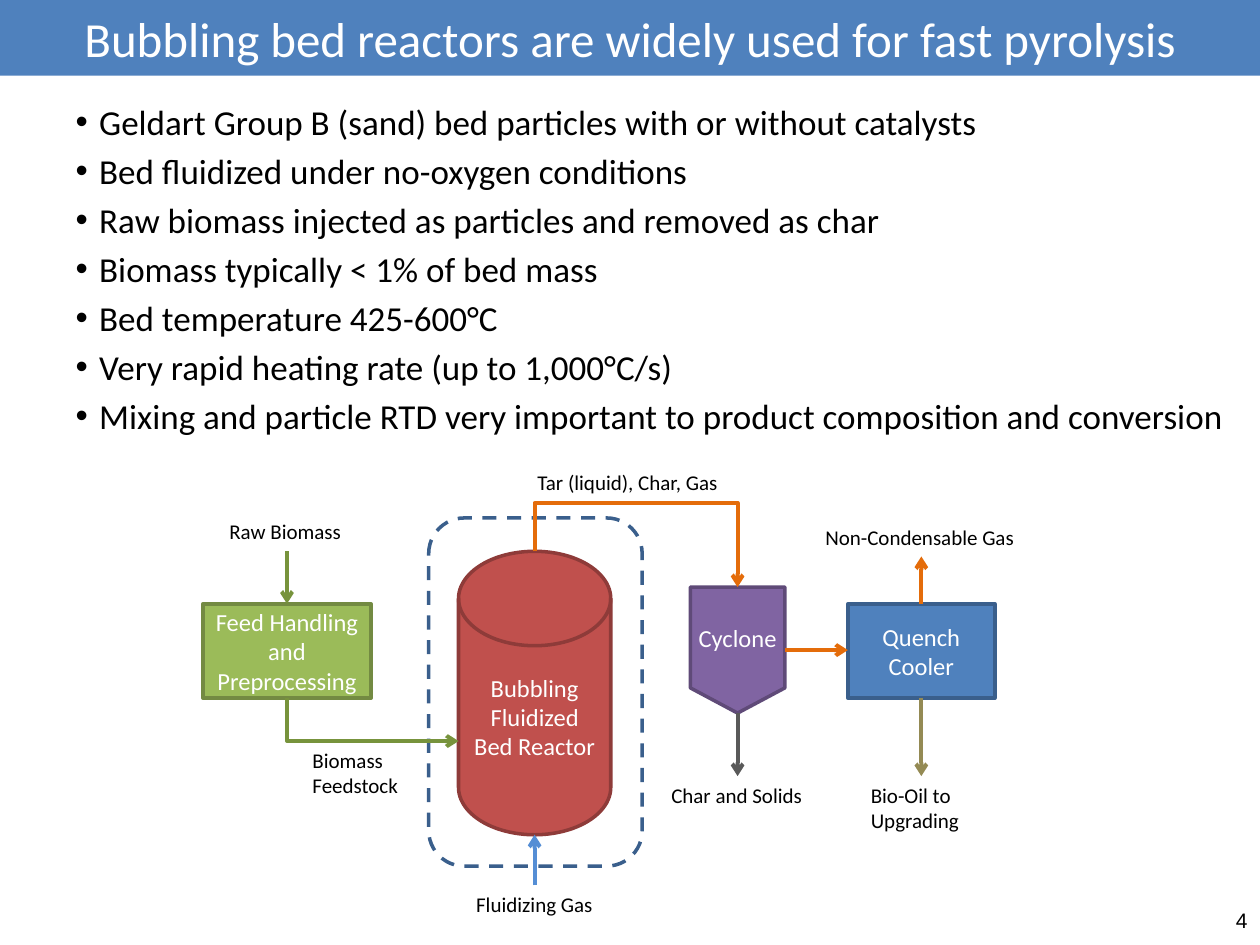
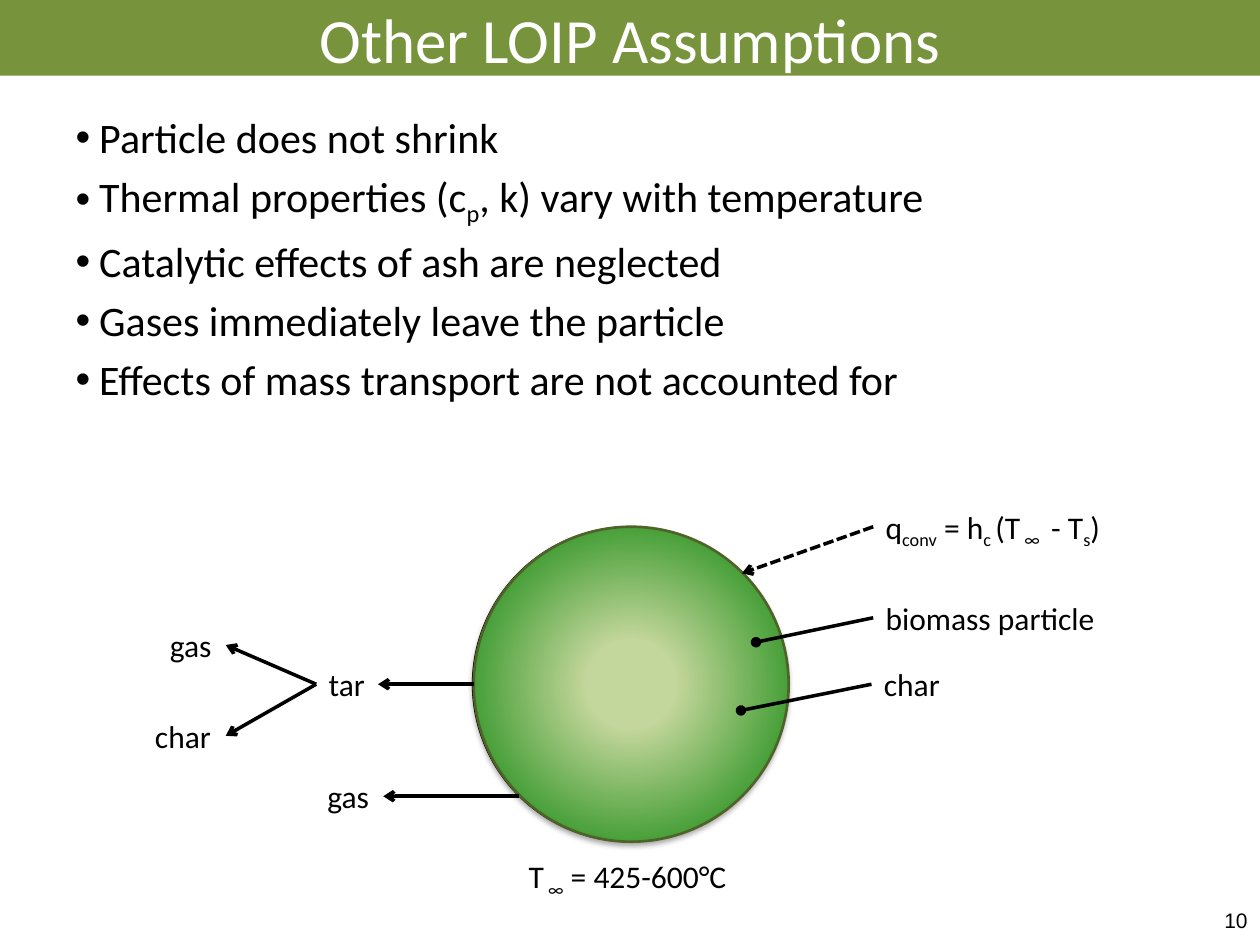
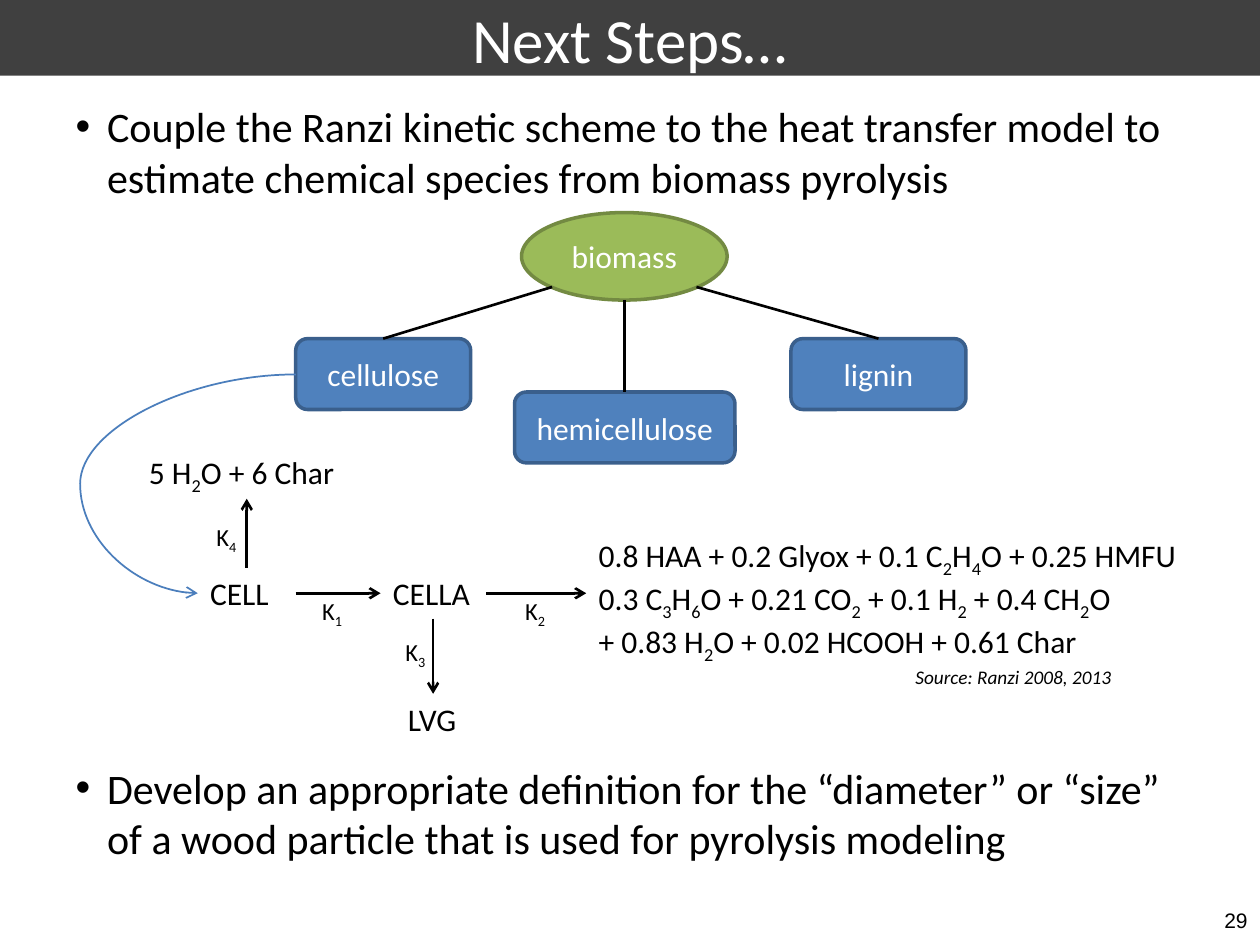
from dataclasses import dataclass
from lxml.etree import SubElement
from pptx import Presentation
from pptx.dml.color import RGBColor
from pptx.enum.dml import MSO_LINE
from pptx.enum.shapes import MSO_CONNECTOR, MSO_SHAPE
from pptx.enum.text import MSO_ANCHOR, MSO_AUTO_SIZE, PP_ALIGN
from pptx.oxml.ns import qn
from pptx.slide import Slide
from pptx.util import Pt

COLORS = {
    "black": "000000", "white": "FFFFFF", "charcoal": "404040", "gray": "595959",
    "blue": "4F81BD", "blue_edge": "3A5F8C", "sky": "558ED5", "curve": "4B7EBC",
    "green": "9BBB59", "green_edge": "738A42", "olive": "77933C",
    "red": "C0504D", "red_edge": "8E3B39", "purple": "8064A2", "purple_edge": "5F4A78",
    "orange": "E46C0A", "tan": "948A54", "brown": "984807",
    "core": "C3D69B", "rim": "008000", "particle_edge": "4F6228",
}
TITLE_BOX = (0, 0, 720, 43.2)
NUMBER_BOX = (552, 511, 168, 29)


def rgb(name):
    return RGBColor.from_string(COLORS[name])


def add_node(parent, tag, **attributes):
    node = SubElement(parent, qn(tag))
    for name, value in attributes.items():
        node.set(name, str(value))
    return node


def place(shape, box):
    shape.left, shape.top, shape.width, shape.height = map(Pt, box)


def write(frame, text, size, color="black", align=None, font="Calibri", italic=None):
    for index, line in enumerate(text.split("\n")):
        paragraph = frame.add_paragraph() if index else frame.paragraphs[0]
        paragraph.alignment = align
        for position, part in enumerate(line.split("~")):
            if not part:
                continue
            run = paragraph.add_run()
            run.text = part
            run.font.name = font
            run.font.size = Pt(size)
            run.font.italic = italic
            run.font.color.rgb = rgb(color)
            if position % 2:
                run.font._element.set("baseline", "-25000")


def style_line(line, color, width, dash=None):
    line.color.rgb = rgb(color)
    line.width = Pt(width)
    if dash:
        line.dash_style = dash


def fill_radial(shape, stops):
    shape.fill.gradient()
    gradient = shape._element.spPr.find(qn("a:gradFill"))
    for child in list(gradient):
        gradient.remove(child)
    stop_list = add_node(gradient, "a:gsLst")
    for percent, color in stops:
        stop = add_node(stop_list, "a:gs", pos=percent * 1000)
        add_node(stop, "a:srgbClr", val=COLORS[color])
    circle = add_node(gradient, "a:path", path="circle")
    add_node(circle, "a:fillToRect", l=50000, t=50000, r=50000, b=50000)


def add_soft_shadow(shape):
    effects = shape._element.spPr.find(qn("a:effectLst"))
    shadow = add_node(effects, "a:outerShdw", blurRad=Pt(3.1), dist=Pt(1.8), dir=5400000, rotWithShape=0)
    color = add_node(shadow, "a:srgbClr", val=COLORS["black"])
    add_node(color, "a:alpha", val=35000)


@dataclass
class Region:
    slide: Slide
    left: float
    top: float
    width: float
    height: float

    def label(self, text, box, size, wrap=True, italic=None):
        left, top, width, height = box
        shape = self.slide.shapes.add_textbox(0, 0, 0, 0)
        place(shape, (self.left + left, self.top + top, width, height))
        shape.text_frame.word_wrap = wrap
        shape.text_frame.auto_size = MSO_AUTO_SIZE.SHAPE_TO_FIT_TEXT
        write(shape.text_frame, text, size, italic=italic)

    def node(self, kind, box, fill, edge, text="", size=14, edge_width=2, dash=None):
        left, top, width, height = box
        shape = self.slide.shapes.add_shape(
            kind, Pt(self.left + left), Pt(self.top + top), Pt(width), Pt(height))
        shape.shadow.inherit = False
        if fill:
            shape.fill.solid()
            shape.fill.fore_color.rgb = rgb(fill)
        else:
            shape.fill.background()
        style_line(shape.line, edge, edge_width, dash)
        if text:
            write(shape.text_frame, text, size, "white", PP_ALIGN.CENTER)
        return shape

    def connector(self, kind, start, end, color, width, tail, dash=None):
        connector = self.slide.shapes.add_connector(
            kind, Pt(self.left + start[0]), Pt(self.top + start[1]),
            Pt(self.left + end[0]), Pt(self.top + end[1]))
        style_line(connector.line, color, width, dash)
        properties = connector._element.spPr
        if tail:
            add_node(properties.find(qn("a:ln")), "a:tailEnd", type=tail)
        add_node(properties, "a:effectLst")
        return connector

    def arrow(self, start, end, color="black", width=2.0, tail="arrow", dash=None):
        self.connector(MSO_CONNECTOR.STRAIGHT, start, end, color, width, tail, dash)

    def route(self, preset, start, end, rotation, flip, color, width, adjust=None):
        across, down = abs(end[0] - start[0]), abs(end[1] - start[1])
        if rotation % 180:
            across, down = down, across
        middle_x, middle_y = (start[0] + end[0]) / 2, (start[1] + end[1]) / 2
        kind = MSO_CONNECTOR.CURVE if preset.startswith("curved") else MSO_CONNECTOR.ELBOW
        connector = self.connector(
            kind, (middle_x - across / 2, middle_y - down / 2),
            (middle_x + across / 2, middle_y + down / 2), color, width, "arrow")
        properties = connector._element.spPr
        frame = properties.find(qn("a:xfrm"))
        frame.set("rot", str(rotation * 60000))
        frame.set(flip, "1")
        geometry = properties.find(qn("a:prstGeom"))
        geometry.set("prst", preset)
        if adjust is not None:
            add_node(geometry.find(qn("a:avLst")), "a:gd", name="adj1", fmla=f"val {adjust}")


def start_slide(presentation, layout, title, title_size, band, number):
    slide = presentation.slides.add_slide(presentation.slide_layouts[layout])
    heading = slide.shapes.title
    place(heading, TITLE_BOX)
    heading.fill.solid()
    heading.fill.fore_color.rgb = rgb(band)
    heading.text_frame.auto_size = MSO_AUTO_SIZE.NONE
    heading.text_frame.vertical_anchor = MSO_ANCHOR.MIDDLE
    write(heading.text_frame, title, title_size, "white", PP_ALIGN.CENTER)
    footer = slide.shapes.add_textbox(0, 0, 0, 0)
    place(footer, NUMBER_BOX)
    footer.text_frame.word_wrap = True
    footer.text_frame.vertical_anchor = MSO_ANCHOR.MIDDLE
    write(footer.text_frame, number, 12, align=PP_ALIGN.RIGHT, font="Arial")
    return slide


def fill_list(placeholder, box, items, size, indent):
    place(placeholder, box)
    frame = placeholder.text_frame
    frame.auto_size = MSO_AUTO_SIZE.NONE
    write(frame, "\n".join(items), size)
    for paragraph in frame.paragraphs:
        properties = paragraph._p.get_or_add_pPr()
        properties.set("marL", str(Pt(indent)))
        properties.set("indent", str(-Pt(indent)))


def draw_process(region):
    region.node(MSO_SHAPE.ROUNDED_RECTANGLE, (130, 31, 122, 199), None, "blue_edge", dash=MSO_LINE.DASH)
    region.node(MSO_SHAPE.FLOWCHART_MAGNETIC_DISK, (147, 50, 87, 162), "red", "red_edge",
                "Bubbling\nFluidized Bed Reactor")
    region.node(MSO_SHAPE.RECTANGLE, (1, 80, 96, 54), "green", "green_edge",
                "Feed Handling\nand Preprocessing")
    cyclone = region.node(MSO_SHAPE.FLOWCHART_OFFPAGE_CONNECTOR, (279.5, 70.5, 54, 72),
                          "purple", "purple_edge", "Cyclone")
    frame = cyclone.text_frame
    frame.margin_left = frame.margin_right = frame.margin_top = frame.margin_bottom = 0
    region.node(MSO_SHAPE.RECTANGLE, (369.5, 80, 84, 54), "blue", "blue_edge", "Quench\nCooler")

    feed_x, reactor_x, cyclone_x, quench_x = 49, 190.5, 306.5, 411.5
    for start, end, color in (
        ((feed_x, 50), (feed_x, 80), "olive"),
        ((333.5, 106.5), (369.5, 106.5), "orange"),
        ((cyclone_x, 142.5), (cyclone_x, 178.5), "gray"),
        ((quench_x, 134), (quench_x, 178.5), "tan"),
        ((quench_x, 80), (quench_x, 53), "orange"),
        ((reactor_x, 241), (reactor_x, 212), "sky"),
    ):
        region.arrow(start, end, color, 2.25)
    region.route("bentConnector2", (feed_x, 134), (147, 158.5), 270, "flipH", "olive", 2.25)
    region.route("bentConnector3", (reactor_x, 50), (cyclone_x, 70.5), 270, "flipH",
                 "orange", 2.25, -135000)

    for text, box, wrap in (
        ("Raw Biomass", (9, 28, 79, 22), False),
        ("Char and Solids", (261.5, 178.5, 90, 22), False),
        ("Bio-Oil to Upgrading", (375.5, 178.5, 71, 36), True),
        ("Biomass\nFeedstock", (56.5, 158.5, 64, 36), False),
        ("Non-Condensable Gas", (349.5, 31, 123, 22), True),
        ("Fluidizing Gas", (150, 241, 81, 22), False),
        ("Tar (liquid), Char, Gas", (185, 0, 143, 22), True),
    ):
        region.label(text, box, 12, wrap)


def draw_particle(region):
    shade = region.node(MSO_SHAPE.OVAL, (190, 16, 180, 180), None, "black", edge_width=0.75)
    fill_radial(shade, ((56, "brown"), (69, "gray")))
    add_soft_shadow(shade)
    particle = region.node(MSO_SHAPE.OVAL, (190.7, 16, 180, 180), None, "particle_edge", edge_width=1.5)
    fill_radial(particle, ((20, "core"), (100, "rim")))

    tar_start = (100.7, 106)
    for start, end in (
        ((190.7, 106), (136, 106)),
        ((216.6, 170), (139, 170)),
        (tar_start, (49, 83.6)),
        (tar_start, (49, 135.5)),
    ):
        region.arrow(start, end)
    region.arrow((419, 16), (344, 42.6), dash=MSO_LINE.SQUARE_DOT)
    region.arrow((419, 68), (352, 82), tail="oval")
    region.arrow((418, 106), (343.4, 121), tail="oval")

    for text, left, top, width in (
        ("char", 418, 91.5, 47),
        ("T~ ∞~ = 425-600°C", 215, 201, 130),
        ("q~conv~ = h~c ~(T~ ∞ ~ - T~s~)", 419, 1.5, 144),
        ("tar", 100.7, 91.5, 35),
        ("gas", 100, 155.5, 39),
        ("gas", 10, 69, 39),
        ("char", 1.5, 121, 47),
    ):
        region.label(text, (left, top, width, 29), 18, False)
    region.label("biomass particle", (419, 53.5, 155, 29), 18)


def draw_kinetics(region):
    region.node(MSO_SHAPE.OVAL, (263, 1.5, 117.5, 50), "green", "green_edge", "biomass", 18)
    for text, left, top, width, joint in (
        ("cellulose", 134, 73.5, 100, (280.5, 44)),
        ("hemicellulose", 259, 104, 126, (322, 51.5)),
        ("lignin", 417, 73.5, 100, (363, 44)),
    ):
        region.node(MSO_SHAPE.ROUNDED_RECTANGLE, (left, top, width, 40.5),
                    "blue", "blue_edge", text, 18)
        region.arrow((left + width / 2, top), joint, width=1.5, tail=None)
    region.route("curvedConnector3", (134, 94), (78, 219), 180, "flipV", "curve", 1, 220000)

    for start, end in (
        ((134, 219), (182.5, 219)),
        ((106, 204.5), (106, 165)),
        ((212.5, 233.5), (212.5, 276.5)),
        ((243, 219), (300, 219)),
    ):
        region.arrow(start, end, width=1.5)
    for text, left, top, width in (
        ("CELL", 78, 204.5, 56),
        ("CELLA", 182.5, 204.5, 60.5),
        ("LVG", 191, 276.7, 42.5),
        ("5 H~2~O + 6 Char", 43, 135.5, 126),
    ):
        region.label(text, (left, top, width, 29), 18)
    for text, left, top in (
        ("K~1~", 142, 217),
        ("K~2~", 258, 217),
        ("K~3~", 189.5, 240.5),
        ("K~4~", 81.5, 174.5),
    ):
        region.label(text, (left, top, 32.4, 24), 14)
    region.label(
        "0.8 HAA + 0.2 Glyox + 0.1 C~2~H~4~O + 0.25 HMFU\n"
        "0.3 C~3~H~6~O + 0.21 CO~2~ + 0.1 H~2~ + 0.4 CH~2~O\n"
        "+ 0.83 H~2~O + 0.02 HCOOH + 0.61 Char", (300, 183, 349, 73), 18)
    region.label("Source: Ranzi 2008, 2013", (481, 256.5, 128, 21), 11, False, True)


def build_reactor_slide(presentation):
    slide = start_slide(presentation, 1, "Bubbling bed reactors are widely used for fast pyrolysis",
                        28, "blue", "4")
    fill_list(slide.placeholders[1], (36, 54, 672, 216), (
        "Geldart Group B (sand) bed particles with or without catalysts",
        "Bed fluidized under no-oxygen conditions",
        "Raw biomass injected as particles and removed as char",
        "Biomass typically < 1% of bed mass",
        "Bed temperature 425-600°C",
        "Very rapid heating rate (up to 1,000°C/s)",
        "Mixing and particle RTD very important to product composition and conversion",
    ), 20, 13.5)
    draw_process(Region(slide, 115, 265, 475, 263))


def build_assumptions_slide(presentation):
    slide = start_slide(presentation, 1, "Other LOIP Assumptions", 36, "olive", "10")
    fill_list(slide.placeholders[1], (36, 60, 648, 227), (
        "Particle does not shrink",
        "Thermal properties (c~p~, k) vary with temperature",
        "Catalytic effects of ash are neglected",
        "Gases immediately leave the particle",
        "Effects of mass transport are not accounted for",
    ), 24, 13.5)
    draw_particle(Region(slide, 80, 285, 575, 230))


def build_next_steps_slide(presentation):
    slide = start_slide(presentation, 3, "Next Steps…", 36, "charcoal", "29")
    steps = (
        "Couple the Ranzi kinetic scheme to the heat transfer model to "
        "estimate chemical species from biomass pyrolysis",
        "Develop an appropriate definition for the “diameter” or “size” "
        "of a wood particle that is used for pyrolysis modeling",
    )
    for index, (top, step) in enumerate(zip((54, 432), steps), start=1):
        fill_list(slide.placeholders[index], (36, top, 648, 84), (step,), 24, 18)
    draw_kinetics(Region(slide, 35, 120, 650, 306))


def main():
    presentation = Presentation()
    presentation.slide_width, presentation.slide_height = Pt(720), Pt(540)
    build_reactor_slide(presentation)
    build_assumptions_slide(presentation)
    build_next_steps_slide(presentation)
    presentation.save("out.pptx")


if __name__ == "__main__":
    main()
